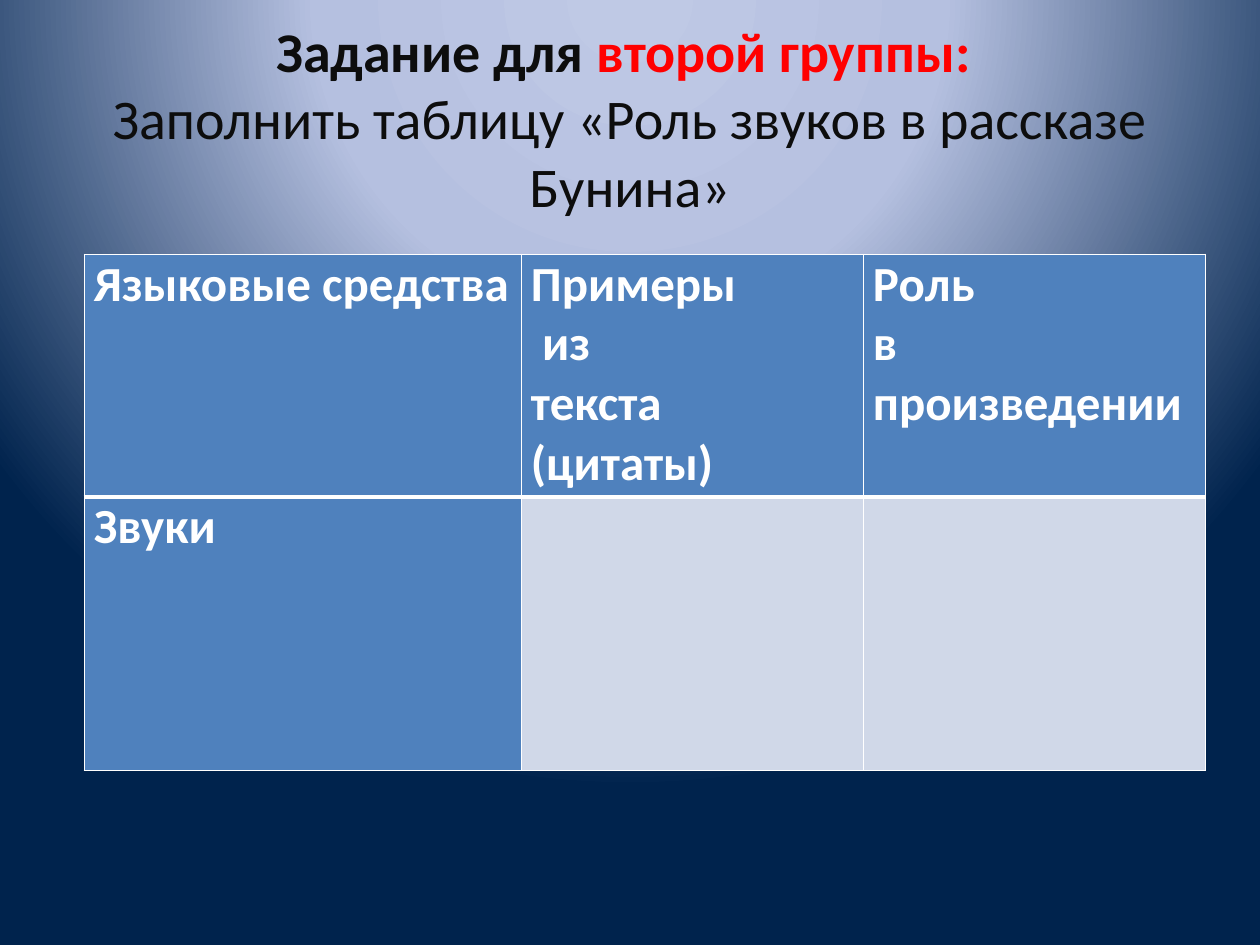
from lxml.etree import SubElement
from pptx import Presentation
from pptx.dml.color import RGBColor
from pptx.enum.text import MSO_ANCHOR, PP_ALIGN
from pptx.oxml import parse_xml
from pptx.oxml.ns import nsdecls, qn
from pptx.util import Cm, Pt

BLUE, PALE, WHITE, INK, RED = "4F81BD", "D0D8E8", "FFFFFF", "0D0D0D", "FF0000"
STOPS = [(0, "BFC9E5"), (40, "B5C0E0"), (100, "00234D")]
ROWS = [
    [["Языковые средства"],
     ["Примеры", " из ", "текста (цитаты)"],
     ["Роль ", "в произведении"]],
    [["Звуки"], [], []],
]


def rgb(value):
    """Turn a hex string into a colour."""
    return RGBColor.from_string(value)


def add_run(p, text, size, color, bold=True):
    """Append one formatted run to a paragraph."""
    r = p.add_run()
    r.text = text
    r.font.name, r.font.size, r.font.bold = "Calibri", Pt(size), bold
    r.font.color.rgb = rgb(color)


def set_background(s):
    """Give the slide a circular gradient centred above its top edge."""
    stops = "".join(
        f'<a:gs pos="{pos * 1000}"><a:srgbClr val="{color}"/></a:gs>' for pos, color in STOPS)
    s._element.cSld.insert(0, parse_xml(
        f'<p:bg {nsdecls("p", "a")}><p:bgPr><a:gradFill rotWithShape="1">'
        f'<a:gsLst>{stops}</a:gsLst><a:path path="circle">'
        '<a:fillToRect l="50000" t="-80000" r="50000" b="180000"/></a:path>'
        '</a:gradFill><a:effectLst/></p:bgPr></p:bg>'))


def add_title(s, x, y, w, h):
    """Write the task heading, raised by one line within its box."""
    tf = s.shapes.add_textbox(x, y, w, h).text_frame
    tf.word_wrap = True
    tf.vertical_anchor = MSO_ANCHOR.MIDDLE
    tf.margin_bottom = Cm(1.48)
    p = tf.paragraphs[0]
    p.alignment = PP_ALIGN.CENTER
    add_run(p, "Задание для ", 32, INK)
    add_run(p, "второй группы: ", 32, RED)
    p.add_line_break()
    add_run(p, "Заполнить таблицу «Роль звуков в рассказе Бунина»", 32, INK, False)


def set_borders(cell, top, bottom):
    """Draw white cell borders with the given top and bottom widths."""
    tc_pr = cell._tc.get_or_add_tcPr()
    for side, width in (("L", 1), ("R", 1), ("T", top), ("B", bottom)):
        ln = SubElement(tc_pr, qn(f"a:ln{side}"), w=str(Pt(width)))
        SubElement(SubElement(ln, qn("a:solidFill")), qn("a:srgbClr"), val=WHITE)


def fill_cell(cell, lines, color):
    """Fill a cell and write its lines as justified paragraphs."""
    cell.fill.solid()
    cell.fill.fore_color.rgb = rgb(color)
    cell.margin_left = cell.margin_right = Cm(0.19)
    cell.margin_top = cell.margin_bottom = 0
    tf = cell.text_frame
    for i, line in enumerate(lines):
        p = tf.add_paragraph() if i else tf.paragraphs[0]
        p.alignment = PP_ALIGN.JUSTIFY
        add_run(p, line, 28, WHITE)


def add_sound_table(s, x, y, w, h):
    """Place the table with a header row and a header column."""
    table = s.shapes.add_table(len(ROWS), len(ROWS[0]), x, y, w, h).table
    for column, share in zip(table.columns, (0.39, 0.305, 0.305)):
        column.width = int(w * share)
    for row, share in zip(table.rows, (0.47, 0.53)):
        row.height = int(h * share)
    for i, row in enumerate(ROWS):
        for j, lines in enumerate(row):
            cell = table.cell(i, j)
            set_borders(cell, 3 if i else 1, 1 if i else 3)
            fill_cell(cell, lines, PALE if i and j else BLUE)


def main():
    """Build the slide and save it."""
    prs = Presentation()
    prs.slide_width, prs.slide_height = Cm(25.4), Cm(19.05)
    s = prs.slides.add_slide(prs.slide_layouts[6])
    set_background(s)
    add_title(s, Cm(1.27), Cm(0.76), Cm(22.86), Cm(4.57))
    add_sound_table(s, Cm(1.7), Cm(5.13), Cm(22.6), Cm(10.4))
    prs.save("out.pptx")


if __name__ == "__main__":
    main()
